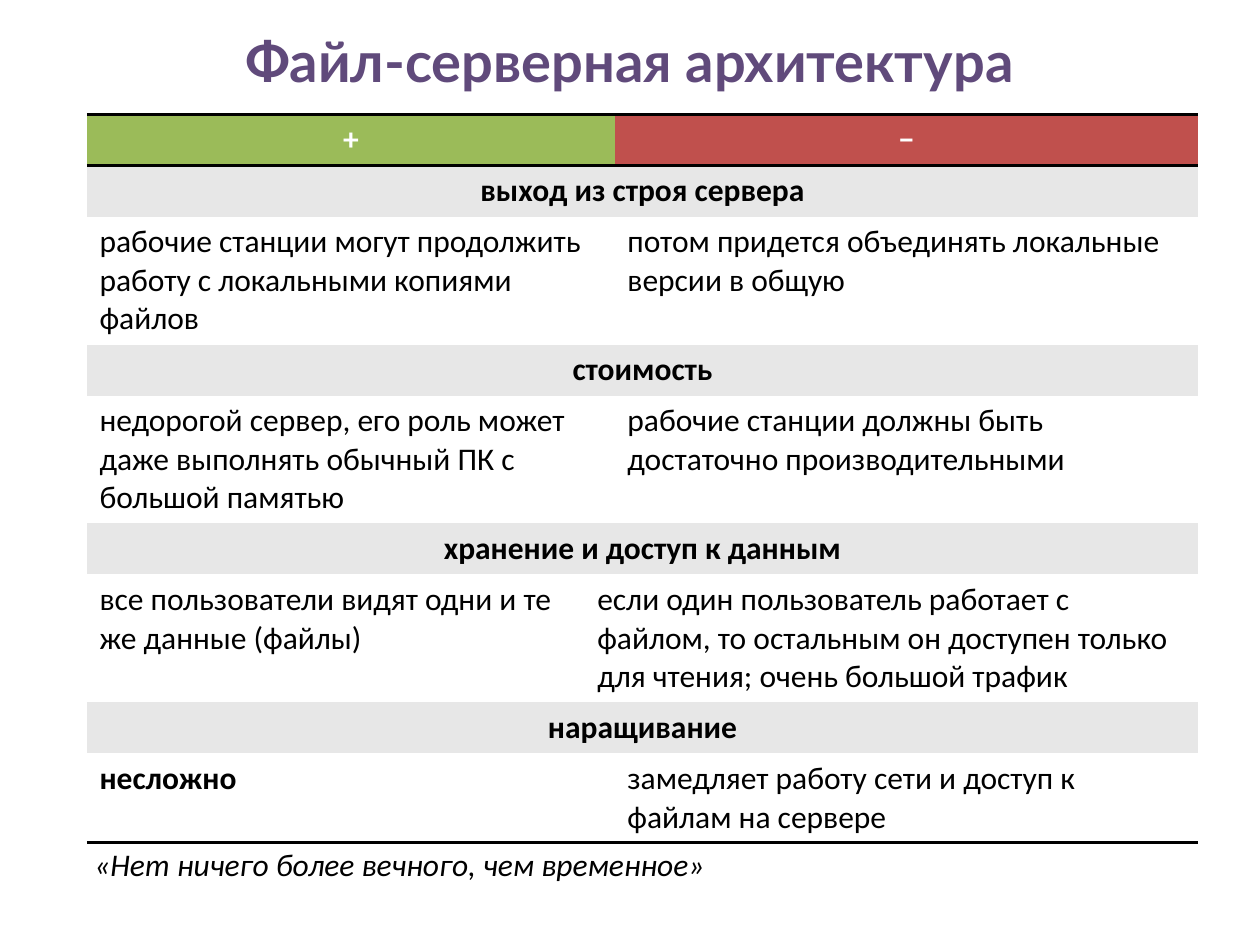
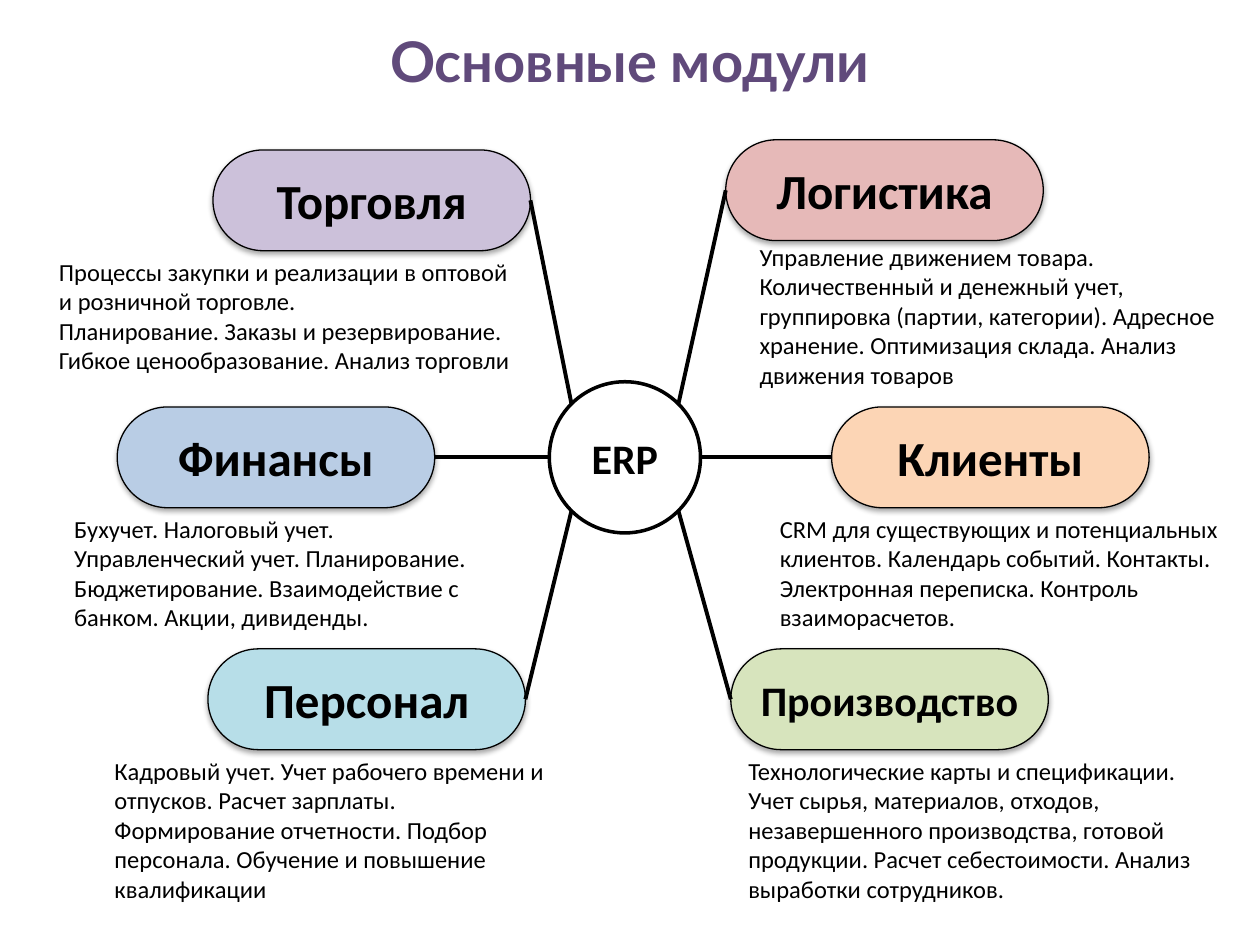
import math

import pptx
import pptx.dml.color
import pptx.enum.shapes
import pptx.enum.text
import pptx.oxml
import pptx.oxml.ns
import pptx.util

ALIGN = pptx.enum.text.PP_ALIGN
ANCHOR = pptx.enum.text.MSO_ANCHOR
SHAPE = pptx.enum.shapes.MSO_SHAPE

COLUMNS, ROWS = 100, 75  # grid over the whole slide
BLACK, WHITE = "000000", "FFFFFF"
TITLE_COLOR = "604A7B"
PLUS_COLOR, MINUS_COLOR, TOPIC_COLOR = "9BBB59", "C0504D", "E7E7E7"
BODY_FONT, TITLE_FONT = "Calibri", "Lato"


def rgb(color):
    return pptx.dml.color.RGBColor.from_string(color)


def element(xml):
    return pptx.oxml.parse_xml(xml.replace(">", " " + pptx.oxml.ns.nsdecls("a") + ">", 1))


class Deck:
    """Holds the style and the slide being built; lengths are grid units."""

    def __init__(self):
        self.prs = pptx.Presentation()
        self.prs.slide_width = pptx.util.Inches(10)
        self.prs.slide_height = pptx.util.Inches(7.5)
        self.slide = None

    def x(self, columns):
        return round(self.prs.slide_width * columns / COLUMNS)

    def y(self, rows):
        return round(self.prs.slide_height * rows / ROWS)

    def area(self, left, top, width, height):
        return self.x(left), self.y(top), self.x(width), self.y(height)

    def new_slide(self, title):
        self.slide = self.prs.slides.add_slide(self.prs.slide_layouts[6])
        self.text(title, (5, 1.6, 90, 11.7), 32, color=TITLE_COLOR, bold=True,
                  align=ALIGN.CENTER, font=TITLE_FONT, grow=False)

    def fill_text(self, frame, text, size, color=BLACK, bold=False, italic=False,
                  align=ALIGN.LEFT, font=BODY_FONT):
        frame.text = text
        for paragraph in frame.paragraphs:
            paragraph.alignment = align
            for run in paragraph.runs:
                run.font.name = font
                run.font.size = pptx.util.Pt(size)
                run.font.bold = bold
                run.font.italic = italic
                run.font.color.rgb = rgb(color)

    def text(self, text, box, size, grow=True, **style):
        frame = self.slide.shapes.add_textbox(*self.area(*box)).text_frame
        frame.word_wrap = True
        if grow:
            frame.auto_size = pptx.enum.text.MSO_AUTO_SIZE.SHAPE_TO_FIT_TEXT
        self.fill_text(frame, text, size, **style)

    def shape(self, kind, box, text, size, fill, line_width):
        shape = self.slide.shapes.add_shape(kind, *self.area(*box))
        shape.shadow.inherit = False
        shape.fill.solid()
        shape.fill.fore_color.rgb = rgb(fill)
        shape.line.color.rgb = rgb(BLACK)
        shape.line.width = pptx.util.Pt(line_width)
        shape.text_frame.vertical_anchor = ANCHOR.MIDDLE
        self.fill_text(shape.text_frame, text, size, bold=True, align=ALIGN.CENTER)
        return shape

    def circle(self, center, radius, text):
        left, top = (c - radius for c in center)
        box = (left, top, 2 * radius, 2 * radius)
        frame = self.shape(SHAPE.OVAL, box, text, 24, WHITE, 2).text_frame
        frame.margin_left = frame.margin_right = 0
        frame.margin_top = frame.margin_bottom = 0

    def pill(self, box, text, size, fill):
        pill = self.shape(SHAPE.ROUNDED_RECTANGLE, box, text, size, fill, 0.75)
        pill.adjustments[0] = 0.5
        effects = pill._element.spPr.find(pptx.oxml.ns.qn("a:effectLst"))
        effects.append(element(
            '<a:outerShdw blurRad="40000" dist="23000" dir="5400000" rotWithShape="0">'
            f'<a:srgbClr val="{BLACK}"><a:alpha val="35000"/></a:srgbClr></a:outerShdw>'))

    def line(self, start, end):
        line = self.slide.shapes.add_connector(
            pptx.enum.shapes.MSO_CONNECTOR.STRAIGHT,
            self.x(start[0]), self.y(start[1]), self.x(end[0]), self.y(end[1]))
        line.line.color.rgb = rgb(BLACK)
        line.line.width = pptx.util.Pt(2.25)
        line._element.spPr.append(element("<a:effectLst></a:effectLst>"))

    def table(self, left, top, widths, heights):
        box = self.area(left, top, sum(widths), sum(heights))
        table = self.slide.shapes.add_table(len(heights), len(widths), *box).table
        table.first_row = table.horz_banding = False
        for column, width in zip(table.columns, widths):
            column.width = self.x(width)
        for row, height in zip(table.rows, heights):
            row.height = self.y(height)
        return table

    def cells(self, table, row, first, last, text, fill, ruled="", **style):
        """Fills one cell over columns first..last, with rules on the ruled edges."""
        for column in range(first, last + 1):
            cell = table.cell(row, column)
            properties = cell._tc.get_or_add_tcPr()
            for edge in "LRTB":
                paint = (f'<a:solidFill><a:srgbClr val="{BLACK}"/></a:solidFill>'
                         if edge in ruled else "<a:noFill/>")
                properties.append(element(f'<a:ln{edge} w="25400">{paint}</a:ln{edge}>'))
            cell.fill.solid()
            cell.fill.fore_color.rgb = rgb(fill)
        start = table.cell(row, first)
        if last > first:
            start.merge(table.cell(row, last))
        self.fill_text(start.text_frame, text, 18, **style)


# Topic, advantage, drawback, lines of text, last column of the advantage
TOPICS = [
    ("выход из строя сервера",
     "рабочие станции могут продолжить работу с локальными копиями файлов",
     "потом придется объединять локальные версии в общую", 3, 1),
    ("стоимость",
     "недорогой сервер, его роль может даже выполнять обычный ПК с большой памятью",
     "рабочие станции должны быть достаточно производительными", 3, 1),
    ("хранение и доступ к данным",
     "все пользователи видят одни и те же данные (файлы)",
     "если один пользователь работает с файлом, то остальным он доступен только "
     "для чтения; очень большой трафик", 3, 0),
    ("наращивание", "несложно",
     "замедляет работу сети и доступ к файлам на сервере", 2, 1),
]

HUB, RADIUS = (49.6, 36.3), 6
PILL_WIDTH, PILL_HEIGHT = 25.2, 8

# Name, text size, fill, pill corner, angle on the hub, description box, description
MODULES = [
    ("Торговля", 28, "CCC1DA", (16.9, 11.9), 225, (3.7, 19.9, 38.3, 10.4),
     "Процессы закупки и реализации в оптовой и розничной торговле.\n"
     "Планирование. Заказы и резервирование. Гибкое ценообразование. Анализ торговли"),
    ("Логистика", 28, "E6B9B8", (57.6, 11.1), 315, (59.3, 18.7, 40.7, 12.8),
     "Управление движением товара. Количественный и денежный учет, группировка "
     "(партии, категории). Адресное хранение. Оптимизация склада. Анализ движения товаров"),
    ("Финансы", 28, "B9CDE5", (9.3, 32.3), 180, (4.9, 40.3, 35.1, 10.4),
     "Бухучет. Налоговый учет. Управленческий учет. Планирование. Бюджетирование. "
     "Взаимодействие с банком. Акции, дивиденды."),
    ("Клиенты", 28, "FCD5B5", (66, 32.3), 0, (60.9, 40.3, 39.1, 10.4),
     "CRM для существующих и потенциальных клиентов. Календарь событий. Контакты. "
     "Электронная переписка. Контроль взаиморасчетов."),
    ("Персонал", 28, "B7DEE8", (16.5, 51.5), 135, (8.1, 59.5, 37.1, 12.8),
     "Кадровый учет. Учет рабочего времени и отпусков. Расчет зарплаты. Формирование "
     "отчетности. Подбор персонала. Обучение и повышение квалификации"),
    ("Производство", 24, "D7E4BD", (58, 51.5), 45, (58.4, 59.5, 39.1, 12.8),
     "Технологические карты и спецификации. Учет сырья, материалов, отходов, "
     "незавершенного производства, готовой продукции. Расчет себестоимости. "
     "Анализ выработки сотрудников."),
]


def row_height(lines):
    return 1 + 3.05 * lines


def build_architecture(deck):
    deck.new_slide("Файл-серверная архитектура")

    # Header of the comparison
    heights = [row_height(1)]
    for topic in TOPICS:
        heights += [row_height(1), row_height(topic[3])]
    comparison = deck.table(6.9, 9.1, (39.5, 1.3, 46.3), heights)
    header = dict(ruled="TB", color=WHITE, bold=True, align=ALIGN.CENTER)
    deck.cells(comparison, 0, 0, 1, "+", PLUS_COLOR, **header)
    deck.cells(comparison, 0, 2, 2, "−", MINUS_COLOR, **header)

    # A topic band, then its two sides
    for index, (topic, plus, minus, _, split) in enumerate(TOPICS):
        band = 1 + 2 * index
        is_last = index == len(TOPICS) - 1
        ruled = "B" if is_last else ""
        deck.cells(comparison, band, 0, 2, topic, TOPIC_COLOR,
                   ruled="T" if index == 0 else "", bold=True, align=ALIGN.CENTER)
        deck.cells(comparison, band + 1, 0, split, plus, WHITE, ruled, bold=is_last)
        deck.cells(comparison, band + 1, split + 1, 2, minus, WHITE, ruled)

    # Closing quotation
    deck.text("«Нет ничего более вечного, чем временное»", (6.5, 66.6, 86.7, 4), 18,
              italic=True, align=ALIGN.JUSTIFY)


def build_modules(deck):
    deck.new_slide("Основные модули")
    deck.circle(HUB, RADIUS, "ERP")

    # Each module: pill, spoke to the hub, description
    for name, size, fill, (left, top), angle, box, description in MODULES:
        deck.pill((left, top, PILL_WIDTH, PILL_HEIGHT), name, size, fill)
        turn = math.radians(angle)
        on_hub = (HUB[0] + RADIUS * math.cos(turn), HUB[1] + RADIUS * math.sin(turn))
        inner_edge = left + PILL_WIDTH if left < HUB[0] else left
        deck.line(on_hub, (inner_edge, top + PILL_HEIGHT / 2))
        deck.text(description, box, 14)


def main():
    deck = Deck()
    build_architecture(deck)
    build_modules(deck)
    deck.prs.save("out.pptx")


if __name__ == "__main__":
    main()
